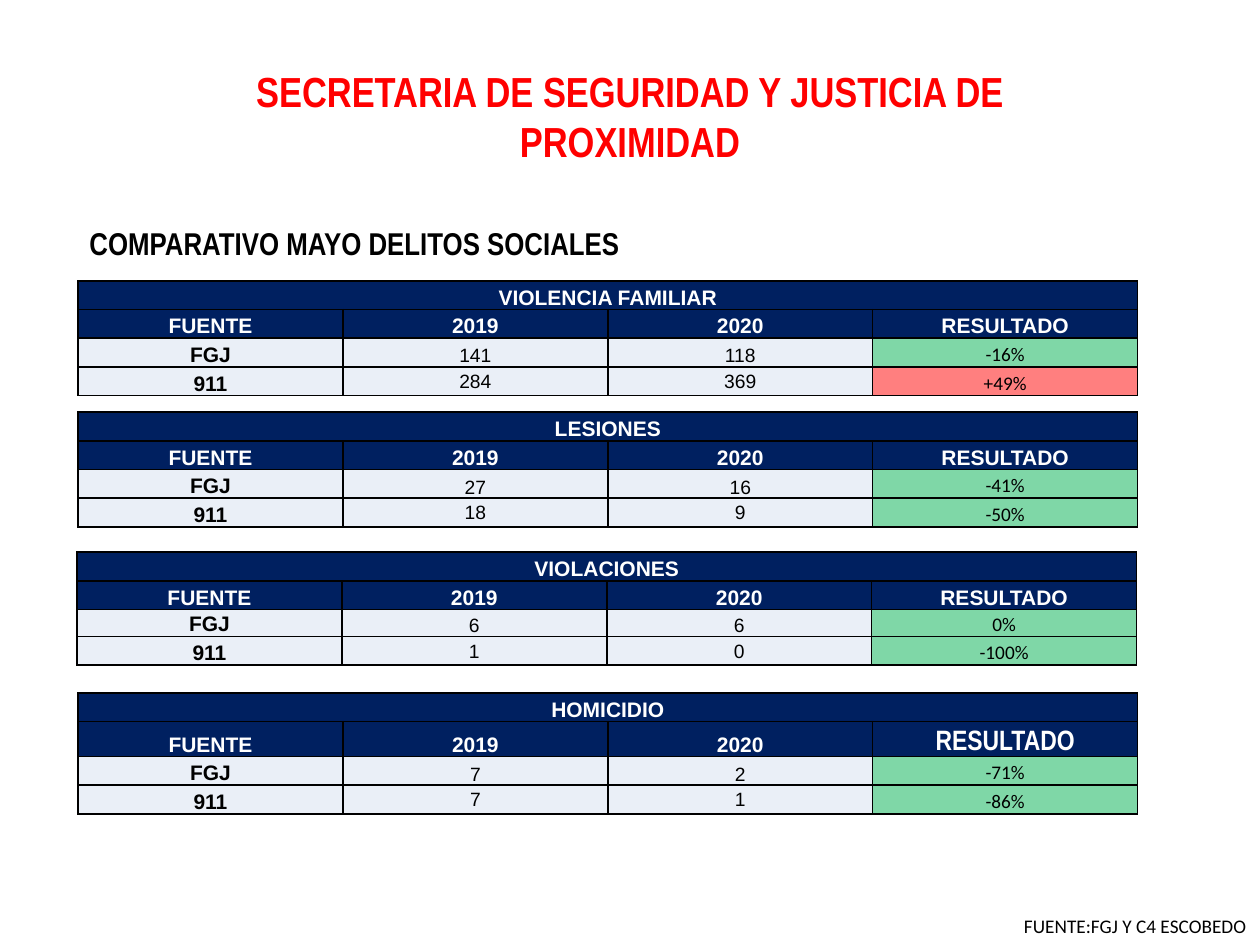
from dataclasses import dataclass

from lxml import etree
from pptx import Presentation
from pptx.dml.color import RGBColor
from pptx.enum.text import MSO_ANCHOR, MSO_AUTO_SIZE, PP_ALIGN
from pptx.oxml.ns import qn
from pptx.util import Pt

BOTTOM, MIDDLE, TOP = MSO_ANCHOR.BOTTOM, MSO_ANCHOR.MIDDLE, MSO_ANCHOR.TOP
CENTER, LEFT = PP_ALIGN.CENTER, PP_ALIGN.LEFT
FIT_SHAPE = MSO_AUTO_SIZE.SHAPE_TO_FIT_TEXT
TITLE_ONLY = 5

COLORS = {
    "title": "FF0000",
    "header": "002060",
    "header_text": "FFFFFF",
    "body": "EAEFF7",
    "text": "000000",
    "border": "000000",
    "better": "00B050",
    "worse": "FF0000",
}
TABLE_WIDTH = 605.5
COLUMN_COUNT = 4
ROW_HEIGHT = 16.4
HEADINGS = ("FUENTE", "2019", "2020", "RESULTADO")


@dataclass(frozen=True)
class CrimeTable:
    name: str
    left: float
    top: float
    rows: tuple
    third_row_height: float = ROW_HEIGHT
    result_font: str = "Arial"
    result_size: float = 12


CRIME_TABLES = (
    CrimeTable("VIOLENCIA FAMILIAR", 44.6, 160.5,
               (("FGJ", "141", "118", "-16%"), ("911", "284", "369", "+49%"))),
    CrimeTable("LESIONES", 44.6, 235.5,
               (("FGJ", "27", "16", "-41%"), ("911", "18", "9", "-50%"))),
    CrimeTable("VIOLACIONES", 44, 315.5,
               (("FGJ", "6", "6", "0%"), ("911", "1", "0", "-100%")),
               third_row_height=15.4),
    CrimeTable("HOMICIDIO", 44.6, 396,
               (("FGJ", "7", "2", "-71%"), ("911", "7", "1", "-86%")),
               result_font="Arial Narrow", result_size=16),
)


def write_text(text_frame, text: str, *, font: str, size: float, color: str,
               bold: bool = False, align=LEFT) -> None:
    paragraph = text_frame.paragraphs[0]
    paragraph.alignment = align
    run = paragraph.add_run()
    run.text = text
    run.font.name = font
    run.font.size = Pt(size)
    run.font.bold = bold
    run.font.color.rgb = RGBColor.from_string(COLORS[color])


def place(shape, left: float, top: float, width: float, height: float) -> None:
    shape.left, shape.top = Pt(left), Pt(top)
    shape.width, shape.height = Pt(width), Pt(height)


def add_borders(cell) -> None:
    properties = cell._tc.get_or_add_tcPr()
    for side in ("a:lnL", "a:lnR", "a:lnT", "a:lnB"):
        line = etree.SubElement(properties, qn(side), w=str(Pt(1)))
        fill = etree.SubElement(line, qn("a:solidFill"))
        etree.SubElement(fill, qn("a:srgbClr"), val=COLORS["border"])


def fill_cell(cell, color: str, opacity: int = 100) -> None:
    cell.fill.solid()
    cell.fill.fore_color.rgb = RGBColor.from_string(COLORS[color])
    if opacity < 100:
        fill = cell._tc.tcPr.find(qn("a:solidFill"))
        etree.SubElement(fill[0], qn("a:alpha"), val=str(opacity * 1000))


def write_header(cell, text: str, font: str = "Arial", size: float = 12) -> None:
    fill_cell(cell, "header")
    write_text(cell.text_frame, text, font=font, size=size,
               color="header_text", bold=True, align=CENTER)


def write_body(cell, text: str, column: int) -> None:
    is_source = column == 0
    is_result = column == COLUMN_COUNT - 1
    if is_result:
        fill_cell(cell, "worse" if text.startswith("+") else "better", 50)
    else:
        fill_cell(cell, "body")
    write_text(cell.text_frame, text, font="Calibri" if is_result else "Arial",
               size=12 if is_source else 11, color="text", bold=is_source,
               align=CENTER)


def add_crime_table(slide, crime: CrimeTable) -> None:
    heights = (ROW_HEIGHT, ROW_HEIGHT, crime.third_row_height, ROW_HEIGHT)
    table = slide.shapes.add_table(
        len(heights), COLUMN_COUNT, Pt(crime.left), Pt(crime.top),
        Pt(TABLE_WIDTH), Pt(sum(heights))).table
    table.horz_banding = False
    for column in table.columns:
        column.width = Pt(TABLE_WIDTH / COLUMN_COUNT)
    for row, height in zip(table.rows, heights):
        row.height = Pt(height)
    for cell in table.iter_cells():
        cell.margin_left = cell.margin_right = cell.margin_top = Pt(0.7)
        cell.margin_bottom = Pt(0)
        cell.vertical_anchor = BOTTOM
        add_borders(cell)

    table.cell(0, 0).merge(table.cell(0, COLUMN_COUNT - 1))
    write_header(table.cell(0, 0), crime.name)
    for column, heading in enumerate(HEADINGS[:-1]):
        write_header(table.cell(1, column), heading)
    write_header(table.cell(1, COLUMN_COUNT - 1), HEADINGS[-1],
                 crime.result_font, crime.result_size)
    for row, values in enumerate(crime.rows, start=2):
        for column, value in enumerate(values):
            write_body(table.cell(row, column), value, column)
    for column in (1, 2):
        table.cell(3, column).vertical_anchor = MIDDLE


def add_label(slide, text: str, left: float, top: float, width: float,
              height: float, wrap: bool = True, **text_format) -> None:
    shape = slide.shapes.add_textbox(Pt(left), Pt(top), Pt(width), Pt(height))
    shape.text_frame.word_wrap = wrap
    shape.text_frame.auto_size = FIT_SHAPE
    write_text(shape.text_frame, text, color="text", **text_format)


def main() -> None:
    presentation = Presentation()
    presentation.slide_width, presentation.slide_height = Pt(720), Pt(540)
    slide = presentation.slides.add_slide(presentation.slide_layouts[TITLE_ONLY])

    title = slide.shapes.title
    place(title, 136.8, 33.8, 446.4, 65.5)
    title.text_frame.word_wrap = True
    title.text_frame.auto_size = FIT_SHAPE
    title.text_frame.vertical_anchor = TOP
    write_text(title.text_frame, "SECRETARIA DE SEGURIDAD Y JUSTICIA DE PROXIMIDAD",
               font="Arial Narrow", size=24, color="title", bold=True, align=CENTER)

    for crime in CRIME_TABLES:
        add_crime_table(slide, crime)

    add_label(slide, "FUENTE:FGJ Y C4 ESCOBEDO", 578, 519, 142.5, 21,
              wrap=False, font="Calibri", size=11)
    add_label(slide, "COMPARATIVO MAYO DELITOS SOCIALES", 44, 124.6, 531.4, 29,
              font="Arial Narrow", size=18, bold=True)
    presentation.save("out.pptx")


if __name__ == "__main__":
    main()
